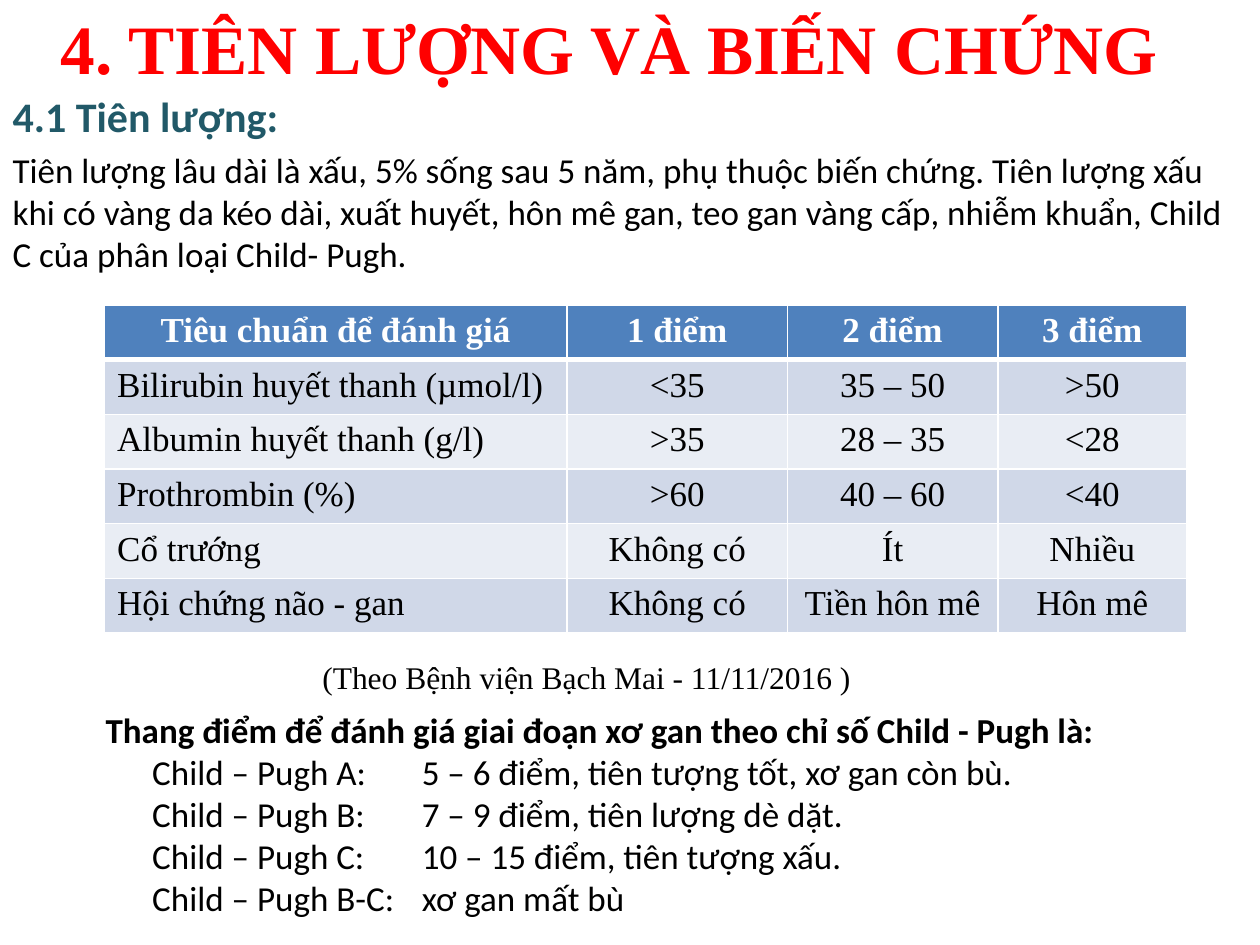
from dataclasses import dataclass

from lxml.etree import SubElement
from pptx import Presentation
from pptx.dml.color import RGBColor
from pptx.enum.text import MSO_ANCHOR, MSO_AUTO_SIZE, PP_ALIGN
from pptx.oxml import parse_xml
from pptx.oxml.ns import nsdecls, qn
from pptx.util import Inches, Pt


@dataclass(frozen=True)
class TextStyle:
    size: float
    font: str
    color: str = "000000"
    bold: bool = False


@dataclass(frozen=True)
class Theme:
    title: TextStyle = TextStyle(39.6, "Times New Roman", "FF0000", True)
    heading: TextStyle = TextStyle(24, "Calibri", "215968", True)
    body: TextStyle = TextStyle(20, "Calibri")
    body_bold: TextStyle = TextStyle(20, "Calibri", bold=True)
    table_header: TextStyle = TextStyle(20, "Times New Roman", "FFFFFF", True)
    table_cell: TextStyle = TextStyle(20, "Times New Roman")
    caption: TextStyle = TextStyle(18, "Times New Roman")
    header_fill: str = "4F81BD"
    band_fills: tuple[str, str] = ("D0D8E8", "E9EDF4")
    border: str = "FFFFFF"


@dataclass(frozen=True)
class Box:
    left: float
    top: float
    width: float
    height: float

    def lengths(self) -> tuple:
        return tuple(Inches(n) for n in (self.left, self.top, self.width, self.height))


@dataclass(frozen=True)
class Stage:
    name: str
    meaning: str


THEME = Theme()
COLUMN_WIDTHS = (3.67, 1.75, 1.67, 1.5)
STAGE_TABS = (0.37, 2.51)
CRITERIA = (
    ("Tiêu chuẩn để đánh giá", "1 điểm", "2 điểm", "3 điểm"),
    ("Bilirubin huyết thanh (µmol/l)", "<35", "35 – 50", ">50"),
    ("Albumin huyết thanh (g/l)", ">35", "28 – 35", "<28"),
    ("Prothrombin (%)", ">60", "40 – 60", "<40"),
    ("Cổ trướng", "Không có", "Ít", "Nhiều"),
    ("Hội chứng não - gan", "Không có", "Tiền hôn mê", "Hôn mê"),
)
STAGES = (
    Stage("Child – Pugh A:", "5 – 6 điểm, tiên tượng tốt, xơ gan còn bù."),
    Stage("Child – Pugh B:", "7 – 9 điểm, tiên lượng dè dặt."),
    Stage("Child – Pugh C:", "10 – 15 điểm, tiên tượng xấu."),
    Stage("Child – Pugh B-C:", "xơ gan mất bù"),
)


def write(paragraph, text: str, style: TextStyle, align=PP_ALIGN.LEFT) -> None:
    paragraph.text = text
    paragraph.alignment = align
    for run in paragraph.runs:
        run.font.size = Pt(style.size)
        run.font.name = style.font
        run.font.bold = style.bold
        run.font.color.rgb = RGBColor.from_string(style.color)


def place(shape, box: Box) -> None:
    shape.left, shape.top, shape.width, shape.height = box.lengths()


def remove_bullet(paragraph) -> None:
    properties = paragraph._p.get_or_add_pPr()
    properties.set("marL", "0")
    properties.set("indent", "0")
    SubElement(properties, qn("a:buNone"))


def add_tabs(paragraph, positions: tuple[float, ...]) -> None:
    tab_list = SubElement(paragraph._p.get_or_add_pPr(), qn("a:tabLst"))
    for position in positions:
        SubElement(tab_list, qn("a:tab"), pos=str(Inches(position)), algn="l")


def set_borders(cell, header: bool) -> None:
    """Draw thin borders, with a thick rule under the header row."""
    thin, thick = Pt(1), Pt(3)
    widths = {"lnL": thin, "lnR": thin, "lnT": thick if not header and cell_is_first(cell) else thin,
              "lnB": thick if header else thin}
    properties = cell._tc.get_or_add_tcPr()
    for index, (side, width) in enumerate(widths.items()):
        properties.insert(index, parse_xml(
            f'<a:{side} {nsdecls("a")} w="{width}"><a:solidFill>'
            f'<a:srgbClr val="{THEME.border}"/></a:solidFill></a:{side}>'))


def cell_is_first(cell) -> bool:
    """Tell whether the cell lies in the first row below the header."""
    return cell._tc.row_idx == 1


def add_criteria_table(slide, box: Box) -> None:
    table = slide.shapes.add_table(len(CRITERIA), len(COLUMN_WIDTHS), *box.lengths()).table
    for column, width in zip(table.columns, COLUMN_WIDTHS):
        column.width = Inches(width)
    for row_index, values in enumerate(CRITERIA):
        header = row_index == 0
        fill = THEME.header_fill if header else THEME.band_fills[(row_index - 1) % 2]
        for column_index, value in enumerate(values):
            cell = table.cell(row_index, column_index)
            cell.fill.solid()
            cell.fill.fore_color.rgb = RGBColor.from_string(fill)
            set_borders(cell, header)
            centred = header or column_index > 0
            write(cell.text_frame.paragraphs[0], value,
                  THEME.table_header if header else THEME.table_cell,
                  PP_ALIGN.CENTER if centred else PP_ALIGN.LEFT)


def add_text_box(slide, box: Box):
    text_frame = slide.shapes.add_textbox(*box.lengths()).text_frame
    text_frame.word_wrap = True
    text_frame.auto_size = MSO_AUTO_SIZE.SHAPE_TO_FIT_TEXT
    return text_frame


def fill_title(slide) -> None:
    title = slide.shapes.title
    place(title, Box(0, -0.17, 9.67, 1.08))
    title.text_frame.vertical_anchor = MSO_ANCHOR.MIDDLE
    title.text_frame.auto_size = MSO_AUTO_SIZE.NONE
    write(title.text_frame.paragraphs[0], "4. TIÊN LƯỢNG VÀ BIẾN CHỨNG",
          THEME.title, PP_ALIGN.CENTER)


def fill_prognosis(slide) -> None:
    body = slide.placeholders[1]
    place(body, Box(0, 0.67, 10, 1.92))
    text_frame = body.text_frame
    text_frame.auto_size = MSO_AUTO_SIZE.NONE
    heading, description = text_frame.paragraphs[0], text_frame.add_paragraph()
    for paragraph, space in ((heading, 0), (description, 4)):
        paragraph.space_before = Pt(space)
        remove_bullet(paragraph)
    write(heading, "4.1 Tiên lượng:", THEME.heading)
    write(description,
          "Tiên lượng lâu dài là xấu, 5% sống sau 5 năm, phụ thuộc biến chứng. "
          "Tiên lượng xấu khi có vàng da kéo dài, xuất huyết, hôn mê gan, teo gan "
          "vàng cấp, nhiễm khuẩn, Child C của phân loại Child- Pugh.", THEME.body)


def add_stages(slide, box: Box) -> None:
    text_frame = add_text_box(slide, box)
    write(text_frame.paragraphs[0],
          "Thang điểm để đánh giá giai đoạn xơ gan theo chỉ số Child - Pugh là:",
          THEME.body_bold)
    for stage in STAGES:
        paragraph = text_frame.add_paragraph()
        add_tabs(paragraph, STAGE_TABS)
        write(paragraph, f"\t{stage.name}\t{stage.meaning}", THEME.body)


def main() -> None:
    presentation = Presentation()
    presentation.slide_width, presentation.slide_height = Inches(10), Inches(7.5)
    slide = presentation.slides.add_slide(presentation.slide_layouts[1])
    fill_title(slide)
    fill_prognosis(slide)
    add_stages(slide, Box(0.74, 5.57, 8.5, 1.78))
    add_criteria_table(slide, Box(0.83, 2.42, sum(COLUMN_WIDTHS), 2.6))
    caption = add_text_box(slide, Box(2.46, 5.17, 4.62, 0.4))
    write(caption.paragraphs[0], "(Theo Bệnh viện Bạch Mai - 11/11/2016 )", THEME.caption)
    presentation.save("out.pptx")


if __name__ == "__main__":
    main()
